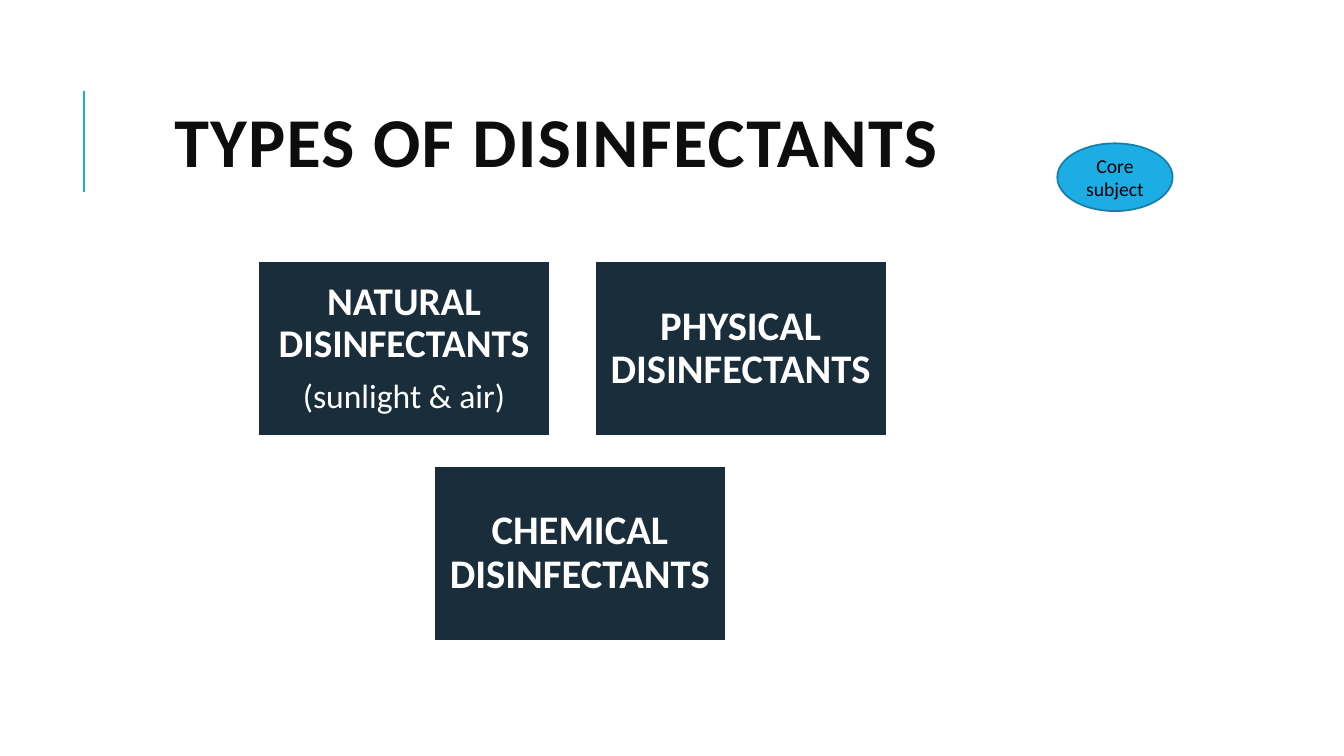
from lxml.etree import SubElement
from pptx import Presentation
from pptx.dml.color import RGBColor
from pptx.enum.shapes import MSO_CONNECTOR as LINE, MSO_SHAPE as SHAPE
from pptx.enum.text import MSO_ANCHOR as ANCHOR, PP_ALIGN as ALIGN
from pptx.oxml.ns import qn
from pptx.util import Pt

COLORS = {
    "accent": "1CADE4",
    "accent_edge": "1580A9",
    "navy": "1A2D3A",
    "title": "0D0D0D",
    "white": "FFFFFF",
    "black": "000000",
}


class SlideBuilder:
    """Holds the style and the current slide."""

    def __init__(self, s, font="Calibri"):
        self.s = s
        self.font = font

    def color(self, name):
        return RGBColor.from_string(COLORS[name])

    def style(self, p, size, color, bold=False, spacing=1.0):
        p.line_spacing = spacing
        for r in p.runs:
            r.font.name = self.font
            r.font.size = Pt(size)
            r.font.bold = bold
            r.font.color.rgb = self.color(color)

    def rule(self, x, top, bottom):
        line = self.s.shapes.add_connector(LINE.STRAIGHT, Pt(x), Pt(bottom), Pt(x), Pt(top))
        line.line.color.rgb = self.color("accent")
        line.line.width = Pt(1.5)
        SubElement(line._element.spPr, qn("a:effectLst"))

    def title(self, text, x, y, w, h):
        tf = self.s.shapes.add_textbox(Pt(x), Pt(y), Pt(w), Pt(h)).text_frame
        tf.word_wrap = True
        tf.vertical_anchor = ANCHOR.MIDDLE
        tf.text = text
        p = tf.paragraphs[0]
        self.style(p, 50, "title", bold=True, spacing=0.8)
        # Letter spacing of 1 pt
        p.runs[0].font._element.set("spc", "100")

    def shape(self, kind, x, y, w, h, fill, edge):
        sp = self.s.shapes.add_shape(kind, Pt(x), Pt(y), Pt(w), Pt(h))
        sp.shadow.inherit = False
        sp.fill.solid()
        sp.fill.fore_color.rgb = self.color(fill)
        sp.line.color.rgb = self.color(edge)
        sp.line.width = Pt(1.25)
        tf = sp.text_frame
        tf.word_wrap = True
        tf.vertical_anchor = ANCHOR.MIDDLE
        return tf

    def card(self, x, y, w, h, heading, size, detail=None):
        tf = self.shape(SHAPE.RECTANGLE, x, y, w, h, "navy", "white")
        tf.margin_left = tf.margin_right = tf.margin_top = tf.margin_bottom = Pt(8.4)
        tf.text = heading
        p = tf.paragraphs[0]
        p.alignment = ALIGN.CENTER
        self.style(p, size, "white", bold=True, spacing=0.9)
        if detail:
            p = tf.add_paragraph()
            p.text = detail
            p.alignment = ALIGN.CENTER
            p.space_before = Pt(9.8)
            self.style(p, 24, "white", spacing=0.9)

    def badge(self, text, x, y, w, h):
        tf = self.shape(SHAPE.OVAL, x, y, w, h, "accent", "accent_edge")
        tf.text = text
        p = tf.paragraphs[0]
        p.alignment = ALIGN.CENTER
        self.style(p, 14, "black")


def main():
    prs = Presentation()
    prs.slide_width, prs.slide_height = Pt(960), Pt(540)
    slide = SlideBuilder(prs.slides.add_slide(prs.slide_layouts[6]))

    # Heading
    slide.rule(60, 65, 137)
    slide.title("TYPES OF DISINFECTANTS", 117.4, 46, 728.6, 118)

    # Disinfectant cards
    top, bottom = 186.7, 332.7
    cards = [
        (184.3, top, "NATURAL DISINFECTANTS", 28, "(sunlight & air)"),
        (424.8, top, "PHYSICAL DISINFECTANTS", 29, None),
        (310, bottom, "CHEMICAL DISINFECTANTS", 29, None),
    ]
    for x, y, heading, size, detail in cards:
        slide.card(x, y, 208.6, 125, heading, size, detail)

    # Subject badge
    slide.badge("Core subject", 755.2, 102.4, 82.4, 48.4)

    prs.save("out.pptx")


if __name__ == "__main__":
    main()
